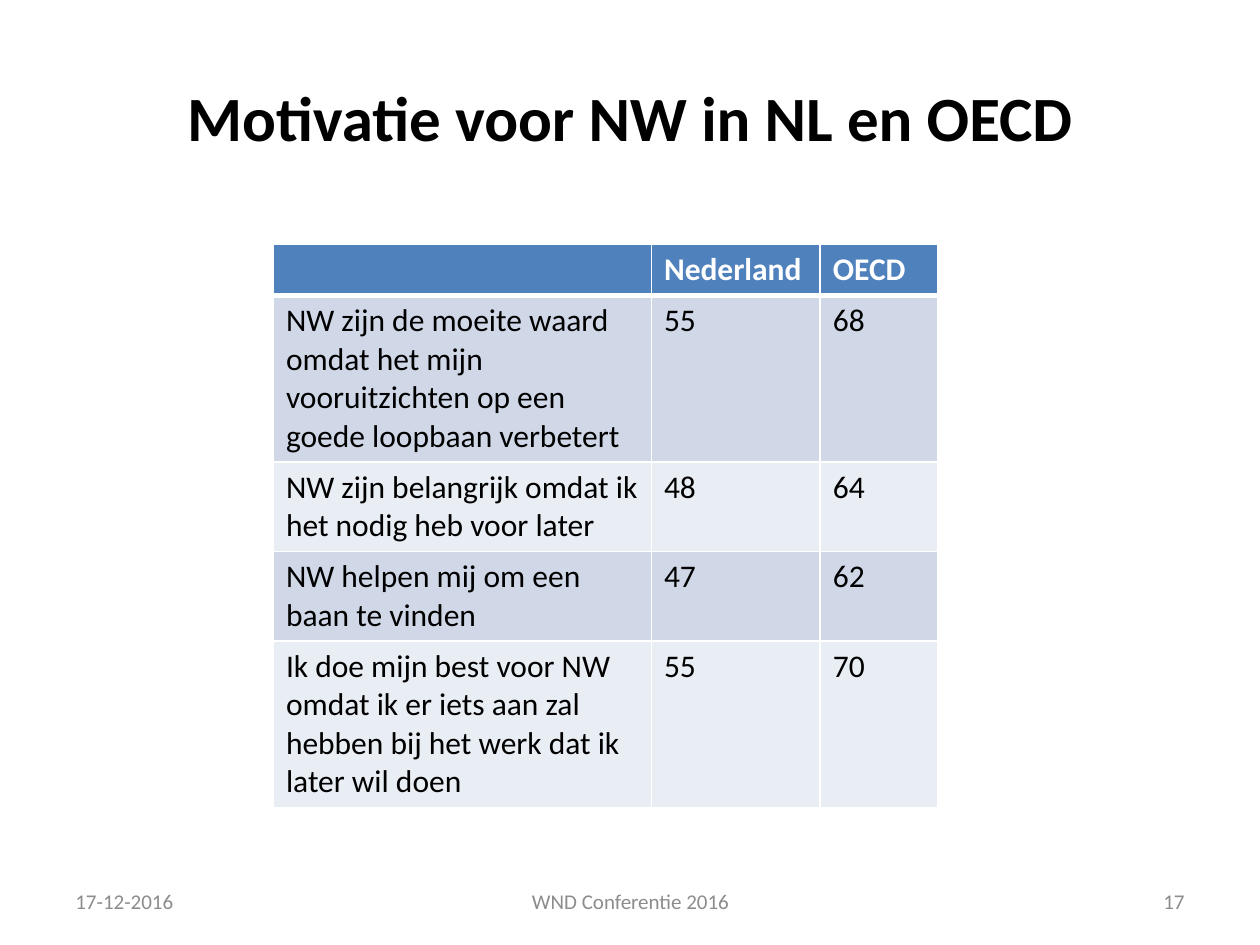
from lxml import etree
from pptx import Presentation
from pptx import util as u
from pptx.dml.color import RGBColor
from pptx.enum import text
from pptx.oxml.ns import qn

TITLE = "Motivatie voor NW in NL en OECD"
ROWS = [
    ("", "Nederland", "OECD"),
    ("NW zijn de moeite waard omdat het mijn vooruitzichten op een goede loopbaan verbetert", "55", "68"),
    ("NW zijn belangrijk omdat ik het nodig heb voor later", "48", "64"),
    ("NW helpen mij om een baan te vinden", "47", "62"),
    ("Ik doe mijn best voor NW omdat ik er iets aan zal hebben bij het werk dat ik later wil doen", "55", "70"),
]
LINES_PER_ROW = (1, 4, 2, 2, 4)
COLUMN_WIDTHS = (3, 1.34, 0.93)
TABLE_LEFT, TABLE_TOP = 2.17, 1.94
LINE_HEIGHT, CELL_PADDING = 0.3, 0.1

FOOTERS = [  # text, left, width, alignment
    ("17-12-2016", 0.5, 2.33, text.PP_ALIGN.LEFT),
    ("WND Conferentie 2016", 3.42, 3.17, text.PP_ALIGN.CENTER),
    ("17", 7.17, 2.33, text.PP_ALIGN.RIGHT),
]
FOOTER_TOP, FOOTER_HEIGHT = 6.95, 0.4

HEADER_FILL, BAND_FILLS = "4F81BD", ("D0D8E8", "E9EDF4")
WHITE, BLACK, GREY = "FFFFFF", "000000", "8C8C8C"


def color(value):
    return RGBColor.from_string(value)


def write(frame, content, size, hue, bold=False, align=text.PP_ALIGN.LEFT):
    frame.text = content
    paragraph = frame.paragraphs[0]
    paragraph.alignment = align
    for font in [paragraph.font] + [run.font for run in paragraph.runs]:
        font.name, font.size, font.bold = "Calibri", u.Pt(size), bold
        font.color.rgb = color(hue)


def add_borders(cell, widths):
    """Draw white cell borders; widths maps L, R, T and B to points."""
    properties = cell._tc.get_or_add_tcPr()
    for side, width in widths.items():
        line = etree.SubElement(properties, qn(f"a:ln{side}"), w=str(u.Pt(width)))
        fill = etree.SubElement(line, qn("a:solidFill"))
        etree.SubElement(fill, qn("a:srgbClr"), val=WHITE)


def add_title(slide):
    title = slide.shapes.title
    title.left, title.top, title.width, title.height = map(u.Inches, (0.5, 0.3, 9, 1.25))
    title.text_frame.vertical_anchor = text.MSO_ANCHOR.MIDDLE
    write(title.text_frame, TITLE, 36, BLACK, True, text.PP_ALIGN.CENTER)


def add_motivation_table(slide):
    heights = [CELL_PADDING + LINE_HEIGHT * lines for lines in LINES_PER_ROW]
    area = map(u.Inches, (TABLE_LEFT, TABLE_TOP, sum(COLUMN_WIDTHS), sum(heights)))
    table = slide.shapes.add_table(len(ROWS), len(COLUMN_WIDTHS), *area).table
    for column, width in zip(table.columns, COLUMN_WIDTHS):
        column.width = u.Inches(width)
    for index, (row, height, values) in enumerate(zip(table.rows, heights, ROWS)):
        row.height = u.Inches(height)
        header = index == 0
        fill = HEADER_FILL if header else BAND_FILLS[(index - 1) % 2]
        borders = {"L": 1, "R": 1, "T": 3 if index == 1 else 1, "B": 3 if header else 1}
        for cell, value in zip(row.cells, values):
            write(cell.text_frame, value, 18, WHITE if header else BLACK, header)
            add_borders(cell, borders)
            cell.fill.solid()
            cell.fill.fore_color.rgb = color(fill)


def add_footers(slide):
    for content, left, width, align in FOOTERS:
        area = map(u.Inches, (left, FOOTER_TOP, width, FOOTER_HEIGHT))
        frame = slide.shapes.add_textbox(*area).text_frame
        frame.word_wrap = True
        frame.vertical_anchor = text.MSO_ANCHOR.MIDDLE
        write(frame, content, 12, GREY, align=align)


def main():
    presentation = Presentation()
    presentation.slide_width, presentation.slide_height = u.Inches(10), u.Inches(7.5)
    slide = presentation.slides.add_slide(presentation.slide_layouts.get_by_name("Title Only"))
    add_title(slide)
    add_motivation_table(slide)
    add_footers(slide)
    presentation.save("out.pptx")


if __name__ == "__main__":
    main()
